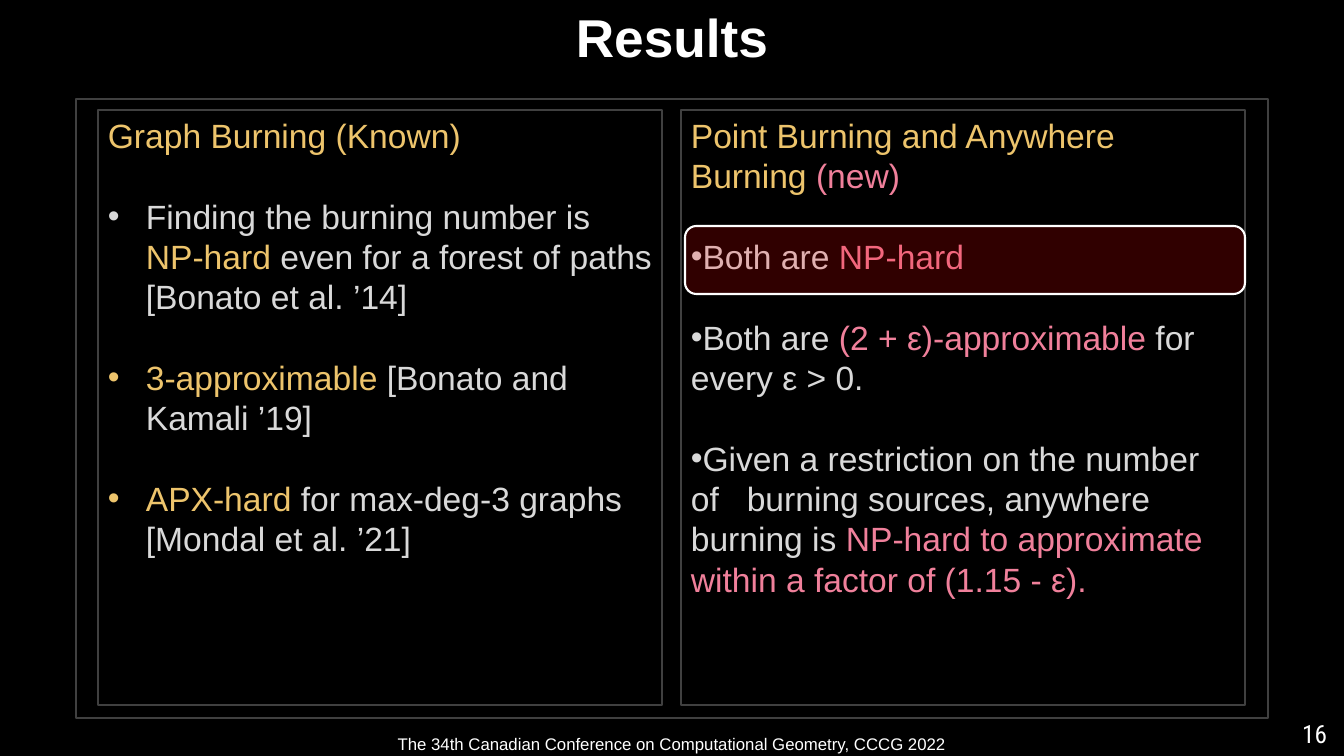
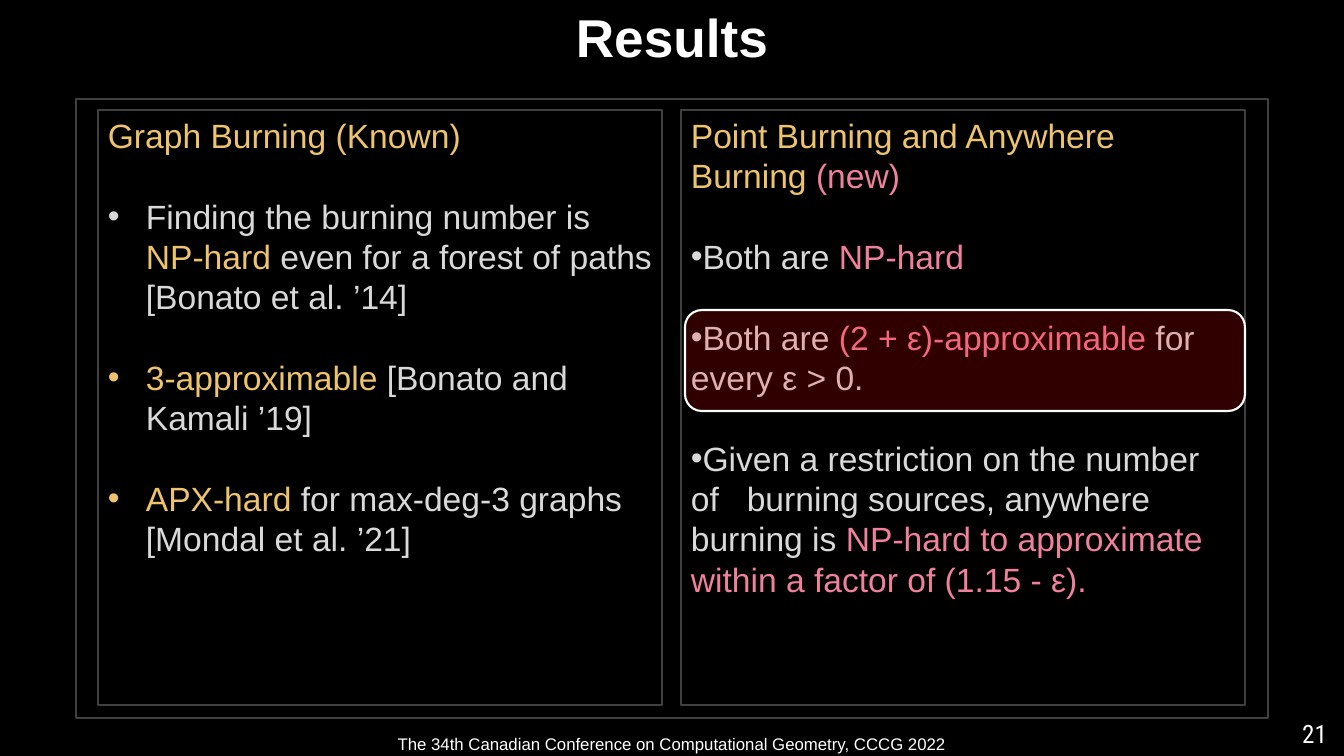
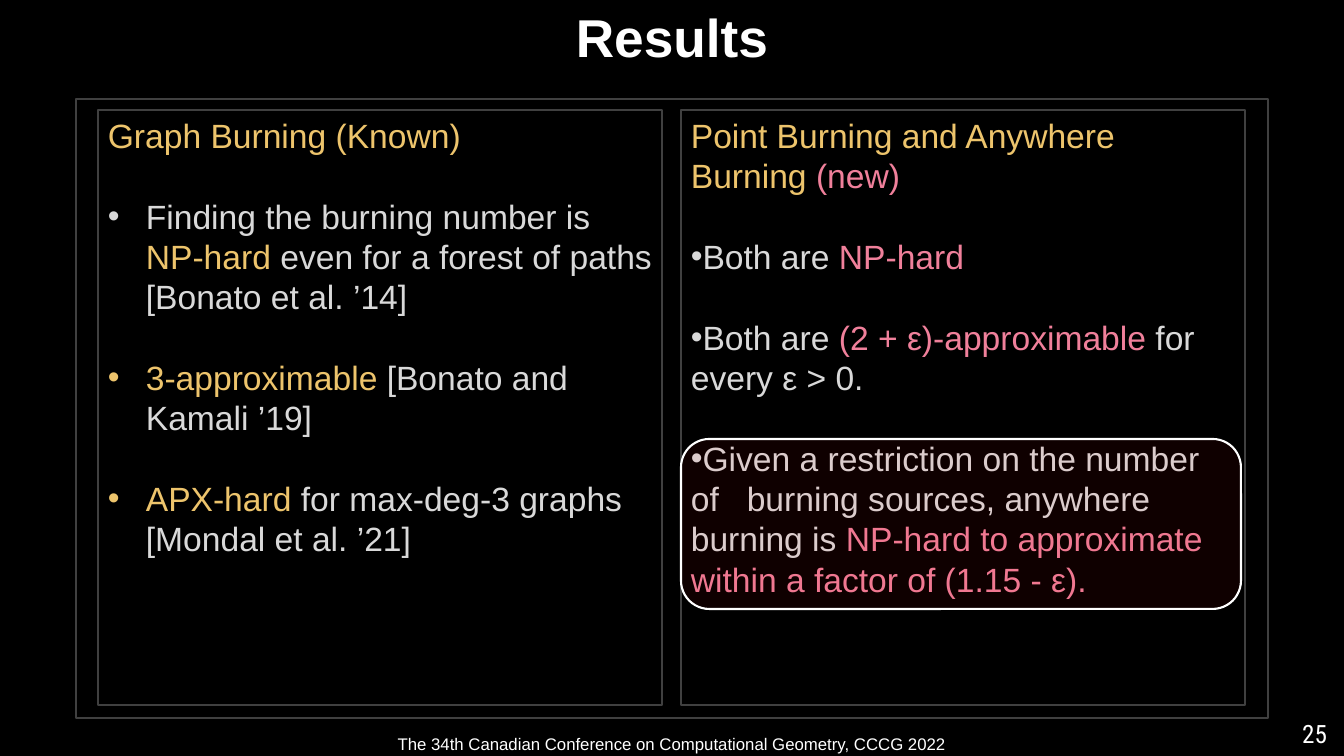
import pptx
import pptx.dml.color
import pptx.enum.shapes
import pptx.enum.text
import pptx.oxml.ns
import pptx.util
import lxml.etree

RGB = pptx.dml.color.RGBColor
BLACK = RGB(0x00, 0x00, 0x00)
WHITE = RGB(0xFF, 0xFF, 0xFF)
FRAME_GRAY = RGB(0x40, 0x40, 0x40)
TEXT_GRAY = RGB(0xD9, 0xD9, 0xD9)
GOLD = RGB(0xED, 0xC4, 0x6C)
PINK = RGB(0xF0, 0x80, 0x9B)
RED = RGB(0xFF, 0x00, 0x00)

SHAPE = pptx.enum.shapes.MSO_SHAPE
ALIGN = pptx.enum.text.PP_ALIGN
ANCHOR = pptx.enum.text.MSO_ANCHOR
qn = pptx.oxml.ns.qn

WIDTH, HEIGHT = 1344, 756
PX = 12192000 / WIDTH
LINE_PITCH = pptx.util.Pt(28.8)
COLUMN_LEFT, COLUMN_TOP, COLUMN_WIDTH, COLUMN_HEIGHT, COLUMN_GAP = 98, 110, 564, 595, 19
BULLET_HANG = 38


def add_box(slide, left, top, width, height, line, weight=1, fill=None, alpha=None, kind=SHAPE.RECTANGLE):
    box = slide.shapes.add_shape(kind, *(round(v * PX) for v in (left, top, width, height)))
    box.shadow.inherit = False
    if line is None:
        box.line.fill.background()
    else:
        box.line.color.rgb = line
        box.line.width = pptx.util.Pt(weight)
    if fill is None:
        box.fill.background()
    else:
        box.fill.solid()
        box.fill.fore_color.rgb = fill
    if alpha is not None:
        color = box.fill._xPr.find(qn("a:solidFill"))[0]
        lxml.etree.SubElement(color, qn("a:alpha"), val=str(alpha * 1000))
    return box


def write(box, paragraphs, size, font="Arial", bold=False, align=ALIGN.LEFT, anchor=ANCHOR.TOP,
          spacing=None, gap=0, margin=None):
    frame = box.text_frame
    frame.word_wrap = True
    frame.vertical_anchor = anchor
    for index, runs in enumerate(paragraphs):
        paragraph = frame.paragraphs[0] if index == 0 else frame.add_paragraph()
        paragraph.alignment = align
        if spacing is not None:
            paragraph.line_spacing = spacing
        if index > 0:
            paragraph.space_before = gap
            if margin is not None:
                properties = paragraph._p.get_or_add_pPr()
                properties.set("marL", str(round(margin * PX)))
                properties.set("indent", str(round(-BULLET_HANG * PX)))
                lxml.etree.SubElement(properties, qn("a:buFont"), typeface="Arial")
                lxml.etree.SubElement(properties, qn("a:buChar"), char="•")
        for text, color in runs:
            run = paragraph.add_run()
            run.text = text
            run.font.name = font
            run.font.size = pptx.util.Pt(size)
            run.font.bold = bold
            run.font.color.rgb = color


known_results = [
    [("Graph Burning (Known)", GOLD)],
    [("Finding the burning number is ", TEXT_GRAY), ("NP-hard", GOLD),
     (" even for a forest of paths [Bonato et al. ’14]", TEXT_GRAY)],
    [("3-approximable", GOLD), (" [Bonato and Kamali ’19]", TEXT_GRAY)],
    [("APX-hard", GOLD), (" for max-deg-3 graphs [Mondal et al. ’21]", TEXT_GRAY)],
]
new_results = [
    [("Point Burning and Anywhere Burning ", GOLD), ("(new)", PINK)],
    [("Both are ", TEXT_GRAY), ("NP-hard", PINK)],
    [("Both are ", TEXT_GRAY), ("(2 + ε)-approximable", PINK), (" for every ε > 0.", TEXT_GRAY)],
    [("Given a restriction on the number of   burning sources, anywhere burning is", TEXT_GRAY),
     (" NP-hard to approximate within a factor of (1.15 - ε).", PINK)],
]
columns = [(known_results, BULLET_HANG), (new_results, 0)]
highlights = [
    ("16", (685, 226, 560, 68), 19),
    ("21", (685, 310, 560, 101), 19),
    ("25", (681, 439, 560, 170), 6),
]

deck = pptx.Presentation()
deck.slide_width = round(WIDTH * PX)
deck.slide_height = round(HEIGHT * PX)

for page, highlight_area, highlight_alpha in highlights:
    slide = deck.slides.add_slide(deck.slide_layouts[6])
    slide.background.fill.solid()
    slide.background.fill.fore_color.rgb = BLACK

    title = add_box(slide, 0, 7, WIDTH, 85, BLACK)
    write(title, [[("Results", WHITE)]], 38, bold=True, align=ALIGN.CENTER, spacing=0.9)

    add_box(slide, 76, 99, 1192, 619, FRAME_GRAY)

    conference = add_box(slide, 0, 731, WIDTH, 25, BLACK, weight=0.5, fill=BLACK)
    write(conference, [[("The 34th Canadian Conference on Computational Geometry, CCCG 2022", WHITE)]],
          12, align=ALIGN.CENTER, anchor=ANCHOR.MIDDLE)

    page_number = add_box(slide, 1085, 713, 252, 84, None)
    write(page_number, [[(page, WHITE)]], 18, font="Roboto Condensed", align=ALIGN.RIGHT)

    for position, (results, margin) in enumerate(columns):
        left = COLUMN_LEFT + position * (COLUMN_WIDTH + COLUMN_GAP)
        column = add_box(slide, left, COLUMN_TOP, COLUMN_WIDTH, COLUMN_HEIGHT, FRAME_GRAY)
        write(column, results, 24, spacing=LINE_PITCH, gap=LINE_PITCH, margin=margin)

    add_box(slide, *highlight_area, WHITE, weight=1.5, fill=RED, alpha=highlight_alpha,
            kind=SHAPE.ROUNDED_RECTANGLE)

deck.save("out.pptx")
